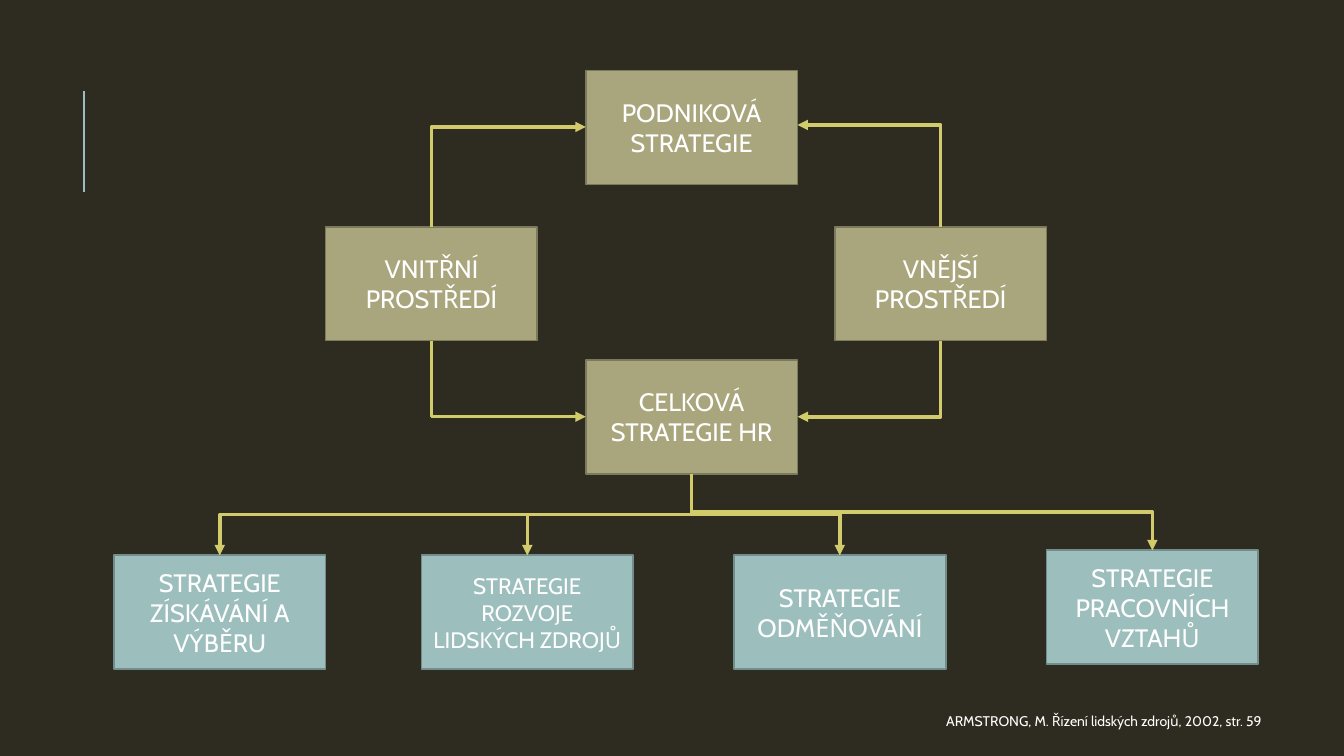
from lxml import etree
from pptx import Presentation
from pptx.dml.color import RGBColor
from pptx.enum.shapes import MSO_CONNECTOR as CONN, MSO_SHAPE as SHAPE
from pptx.enum.text import MSO_ANCHOR as ANCHOR, PP_ALIGN as ALIGN
from pptx.oxml.ns import qn
from pptx.util import Inches, Pt

BACKGROUND = RGBColor(0x2E, 0x2B, 0x21)
OLIVE = RGBColor(0xA9, 0xA5, 0x7C)
OLIVE_EDGE = RGBColor(0x7D, 0x7A, 0x5C)
TEAL = RGBColor(0x9C, 0xBE, 0xBD)
TEAL_EDGE = RGBColor(0x73, 0x8D, 0x8C)
YELLOW = RGBColor(0xD2, 0xCB, 0x6C)
WHITE = RGBColor(0xFF, 0xFF, 0xFF)

BOX_W, BOX_H = 2.1, 1.13


class Diagram:
    """Draws boxes, lines and text in one style on one slide."""

    font = "Cabin"

    def __init__(self, slide):
        self.shapes = slide.shapes
        fill = slide.background.fill
        fill.solid()
        fill.fore_color.rgb = BACKGROUND

    def set_text(self, tf, text, size, align):
        tf.word_wrap = True
        tf.text = text
        p = tf.paragraphs[0]
        p.alignment = align
        r = p.runs[0]
        r.font.name = self.font
        r.font.size = Pt(size)
        r.font.color.rgb = WHITE

    def box(self, x, y, text, fill, edge, size=18):
        sp = self.shapes.add_shape(SHAPE.RECTANGLE, Inches(x), Inches(y),
                                   Inches(BOX_W), Inches(BOX_H))
        sp.shadow.inherit = False
        sp.fill.solid()
        sp.fill.fore_color.rgb = fill
        sp.line.color.rgb = edge
        sp.line.width = Pt(1.25)
        sp.text_frame.vertical_anchor = ANCHOR.MIDDLE
        self.set_text(sp.text_frame, text, size, ALIGN.CENTER)

    def text(self, x, y, w, h, text, size, align):
        sp = self.shapes.add_textbox(Inches(x), Inches(y), Inches(w), Inches(h))
        self.set_text(sp.text_frame, text, size, align)

    def line(self, x1, y1, x2, y2, color, width, kind=CONN.STRAIGHT):
        sp = self.shapes.add_connector(kind, Inches(x1), Inches(y1),
                                       Inches(x2), Inches(y2))
        sp.line.color.rgb = color
        sp.line.width = Pt(width)
        etree.SubElement(sp._element.spPr, qn("a:effectLst"))
        return sp

    def elbow(self, x1, y1, x2, y2, bends):
        """Arrow that leaves vertically and turns once or twice."""
        dx, dy = x2 - x1, y2 - y1
        cx, cy = (x1 + x2) / 2, (y1 + y2) / 2
        # The connector is laid out sideways, then turned about its centre
        turn = 90 if dx < 0 < dy else 270
        side = 0.5 if turn == 270 else -0.5
        sp = self.line(cx + side * dy, cy - side * dx,
                       cx - side * dy, cy + side * dx, YELLOW, 2.5, CONN.ELBOW)
        sp.rotation = turn
        props = sp._element.spPr
        props.find(qn("a:prstGeom")).set("prst", f"bentConnector{bends + 1}")
        etree.SubElement(props.find(qn("a:ln")), qn("a:tailEnd"), type="triangle")


def main():
    prs = Presentation()
    prs.slide_width, prs.slide_height = Inches(13.33), Inches(7.5)
    diagram = Diagram(prs.slides.add_slide(prs.slide_layouts[6]))

    # Accent line
    diagram.line(0.83, 1.9, 0.83, 0.9, TEAL, 1.5)

    # Strategy cycle
    centre_x, left_x, right_x = 5.81, 3.23, 8.28
    top_y, middle_y, bottom_y = 0.7, 2.25, 3.57
    for x, y, text in [
        (centre_x, top_y, "PODNIKOVÁ STRATEGIE"),
        (left_x, middle_y, "VNITŘNÍ PROSTŘEDÍ"),
        (right_x, middle_y, "VNĚJŠÍ PROSTŘEDÍ"),
        (centre_x, bottom_y, "CELKOVÁ STRATEGIE HR"),
    ]:
        diagram.box(x, y, text, OLIVE, OLIVE_EDGE)

    # Arrows from both environments to the strategies
    for x, target_x, upper_y in [(left_x, centre_x, 1.26),
                                 (right_x, centre_x + BOX_W, 1.24)]:
        start_x = x + BOX_W / 2
        diagram.elbow(start_x, middle_y, target_x, upper_y, bends=1)
        diagram.elbow(start_x, middle_y + BOX_H, target_x,
                      bottom_y + BOX_H / 2, bends=1)

    # Partial strategies, each with its arrow
    for x, y, text, size in [
        (1.13, 5.51, "STRATEGIE ZÍSKÁVÁNÍ A VÝBĚRU", 18),
        (4.18, 5.51, "STRATEGIE ROZVOJE LIDSKÝCH ZDROJŮ", 16),
        (7.28, 5.51, "STRATEGIE ODMĚŇOVÁNÍ", 18),
        (10.38, 5.46, "STRATEGIE PRACOVNÍCH VZTAHŮ", 18),
    ]:
        diagram.box(x, y, text, TEAL, TEAL_EDGE, size)
        diagram.elbow(centre_x + BOX_W / 2, bottom_y + BOX_H,
                      x + BOX_W / 2, y, bends=2)

    # Citation
    diagram.text(7.23, 7.02, 5.38, 0.27,
                 "ARMSTRONG, M. Řízení lidských zdrojů, 2002, str. 59",
                 10, ALIGN.RIGHT)

    prs.save("out.pptx")


if __name__ == "__main__":
    main()
